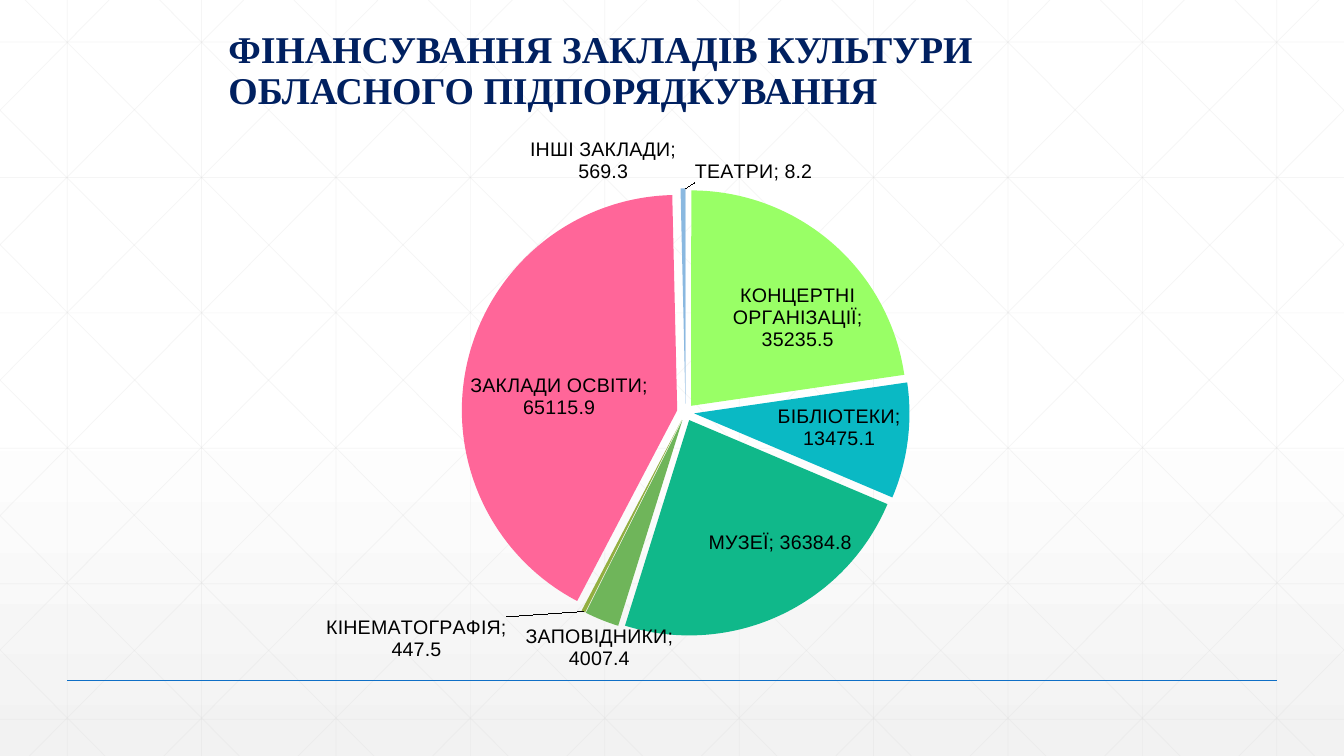
from dataclasses import dataclass

from lxml.etree import SubElement
from pptx import Presentation
from pptx.chart.data import CategoryChartData
from pptx.dml.color import RGBColor
from pptx.enum.chart import XL_CHART_TYPE, XL_LABEL_POSITION
from pptx.enum.text import MSO_ANCHOR, MSO_AUTO_SIZE, PP_ALIGN
from pptx.enum.shapes import MSO_CONNECTOR
from pptx.oxml import parse_xml
from pptx.oxml.ns import nsdecls, qn
from pptx.slide import Slide
from pptx.util import Pt

PX = 9525
WIDTH, HEIGHT = 1280, 720
GRID_STEP = 128
DIAGONAL_RUN = 716

COLORS = {
    "white": "FFFFFF",
    "fade": "F2F2F2",
    "grid": "D9D9D9",
    "rule": "0F6FC6",
    "heading": "002060",
    "label": "000000",
}


@dataclass(frozen=True)
class Line:
    x1: int
    y1: int
    x2: int
    y2: int
    color: str = "grid"
    weight: float = 0.5
    opacity: int = 25


@dataclass(frozen=True)
class Funding:
    institution: str
    amount: float
    color: str


FUNDING = [
    Funding("ТЕАТРИ", 8.2, "0F6FC6"),
    Funding("КОНЦЕРТНІ ОРГАНІЗАЦІЇ", 35235.5, "99FF66"),
    Funding("БІБЛІОТЕКИ", 13475.1, "0AB9C4"),
    Funding("МУЗЕЇ", 36384.8, "10B88A"),
    Funding("ЗАПОВІДНИКИ", 4007.4, "6FB55A"),
    Funding("КІНЕМАТОГРАФІЯ", 447.5, "93AF41"),
    Funding("ЗАКЛАДИ ОСВІТИ", 65115.9, "FF6699"),
    Funding("ІНШІ ЗАКЛАДИ", 569.3, "8AB8E0"),
]


def rgb(name: str) -> RGBColor:
    return RGBColor.from_string(COLORS[name])


def paint_background(slide: Slide) -> None:
    fill = slide.background.fill
    fill.gradient()
    fill.gradient_angle = 270
    stops = slide.element.find(".//" + qn("a:gsLst"))
    for stop in list(stops):
        stops.remove(stop)
    for position, color, opacity in ((0, "white", 100), (53, "white", 100), (100, "fade", 65)):
        stop = SubElement(stops, qn("a:gs"), pos=str(position * 1000))
        tone = SubElement(stop, qn("a:srgbClr"), val=COLORS[color])
        SubElement(tone, qn("a:alpha"), val=str(opacity * 1000))


def draw_line(slide: Slide, line: Line) -> None:
    ends = [value * PX for value in (line.x1, line.y1, line.x2, line.y2)]
    connector = slide.shapes.add_connector(MSO_CONNECTOR.STRAIGHT, *ends)
    connector.line.color.rgb = rgb(line.color)
    connector.line.width = Pt(line.weight)
    properties = connector.element.spPr
    tone = properties.find(".//" + qn("a:srgbClr"))
    SubElement(tone, qn("a:alpha"), val=str(line.opacity * 1000))
    SubElement(properties, qn("a:effectLst"))


def clipped_diagonal(start: int) -> Line:
    left = max(start, 0)
    right = min(start + DIAGONAL_RUN, WIDTH)
    top, bottom = (round((x - start) * HEIGHT / DIAGONAL_RUN) for x in (left, right))
    return Line(left, top, right, bottom)


def grid_lines() -> list[Line]:
    columns = [Line(x, 0, x, HEIGHT) for x in range(64, WIDTH, GRID_STEP)]
    rows = [Line(0, y, WIDTH, y) for y in range(40, HEIGHT, GRID_STEP + 1)]
    falling = [clipped_diagonal(24 + GRID_STEP * i) for i in range(-5, 10)]
    rising = [Line(WIDTH - d.x1, d.y1, WIDTH - d.x2, d.y2) for d in falling]
    return columns + rows + falling + rising


def add_funding_pie(slide: Slide) -> None:
    data = CategoryChartData()
    data.categories = [item.institution for item in FUNDING]
    data.add_series("Series 1", [item.amount for item in FUNDING])
    frame = slide.shapes.add_chart(
        XL_CHART_TYPE.PIE_EXPLODED, 208 * PX, 120 * PX, 890 * PX, 540 * PX, data
    )
    chart = frame.chart
    chart.has_title = False
    chart.has_legend = False
    chart.font.name = "Arial"
    chart.font.size = Pt(18)
    chart.font.color.rgb = rgb("label")

    plot = chart.plots[0]
    plot.vary_by_categories = True
    series = plot.series[0]
    for index, item in enumerate(FUNDING):
        fill = series.points[index].format.fill
        fill.solid()
        fill.fore_color.rgb = RGBColor.from_string(item.color)
    explosion = series._element.find(qn("c:explosion"))
    if explosion is not None:
        explosion.set("val", "4")

    labels = series.data_labels
    labels.show_category_name = True
    labels.show_value = True
    labels.show_percentage = False
    labels.position = XL_LABEL_POSITION.BEST_FIT
    labels.font.name = "Arial"
    labels.font.size = Pt(14)
    labels.font.color.rgb = rgb("label")
    leader = labels._element.find(qn("c:showLeaderLines"))
    separator = parse_xml(f'<c:separator {nsdecls("c")}>; </c:separator>')
    if leader is None:
        labels._element.append(separator)
        SubElement(labels._element, qn("c:showLeaderLines"), val="1")
    else:
        leader.set("val", "1")
        leader.addprevious(separator)

    area = chart.element.find(".//" + qn("c:plotArea"))
    for layout in area.findall(qn("c:layout")):
        area.remove(layout)
    layout = parse_xml(f'<c:layout {nsdecls("c")}><c:manualLayout/></c:layout>')
    area.insert(0, layout)
    settings = {
        "layoutTarget": "inner", "xMode": "edge", "yMode": "edge",
        "x": "0.26", "y": "0.11", "w": "0.48", "h": "0.79",
    }
    for key, value in settings.items():
        SubElement(layout[0], qn(f"c:{key}"), val=value)


def place_title(slide: Slide) -> None:
    title = slide.shapes.title
    title.left, title.top, title.width, title.height = (v * PX for v in (208, 0, 864, 112))
    frame = title.text_frame
    frame.text = "ФІНАНСУВАННЯ ЗАКЛАДІВ КУЛЬТУРИ ОБЛАСНОГО ПІДПОРЯДКУВАННЯ"
    frame.word_wrap = True
    frame.auto_size = MSO_AUTO_SIZE.NONE
    frame.vertical_anchor = MSO_ANCHOR.BOTTOM
    heading = frame.paragraphs[0]
    heading.alignment = PP_ALIGN.LEFT
    heading.line_spacing = 0.9
    heading.font.name = "Times New Roman"
    heading.font.size = Pt(27)
    heading.font.bold = True
    heading.font.color.rgb = rgb("heading")
    slide.shapes.element.append(title.element)


def main() -> None:
    presentation = Presentation()
    presentation.slide_width = WIDTH * PX
    presentation.slide_height = HEIGHT * PX
    slide = presentation.slides.add_slide(presentation.slide_layouts[5])
    paint_background(slide)
    for line in grid_lines():
        draw_line(slide, line)
    draw_line(slide, Line(64, 648, 1216, 648, "rule", 1, 100))
    add_funding_pie(slide)
    place_title(slide)
    presentation.save("out.pptx")


if __name__ == "__main__":
    main()
